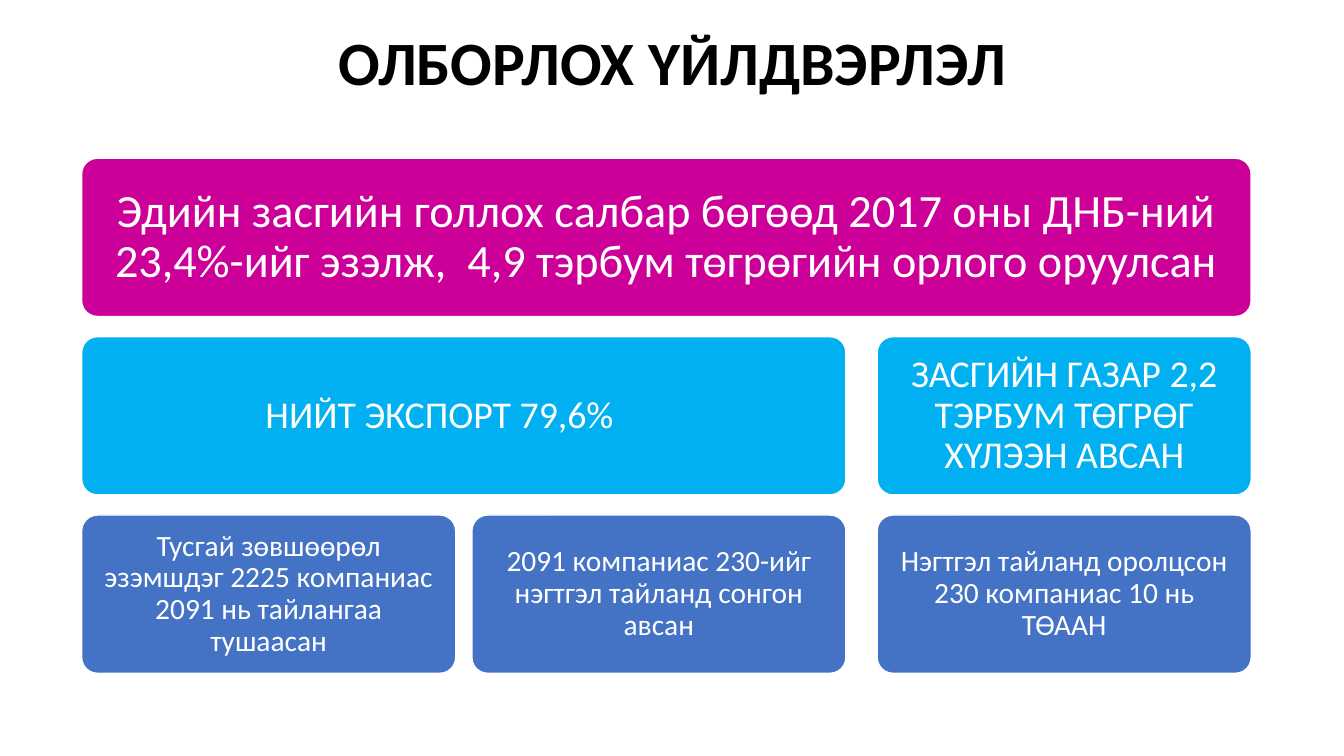
from dataclasses import dataclass

import pptx
import pptx.dml.color
import pptx.enum.shapes
import pptx.enum.text
import pptx.util

Inches = pptx.util.Inches


@dataclass(frozen=True)
class Theme:
    font: str = "Calibri"
    ink: str = "000000"
    light: str = "FFFFFF"
    headline_fill: str = "CC0099"
    share_fill: str = "00B0F0"
    report_fill: str = "4472C4"
    title_size: int = 44
    headline_size: int = 33
    share_size: int = 27
    report_size: int = 21


@dataclass(frozen=True)
class Level:
    row: int
    fill: str
    size: int
    inset: float


THEME = Theme()
HEADLINE = Level(0, THEME.headline_fill, THEME.headline_size, 0.14)
SHARE = Level(1, THEME.share_fill, THEME.share_size, 0.11)
REPORT = Level(2, THEME.report_fill, THEME.report_size, 0.09)

COLUMN_LEFTS = (0.81, 4.68, 8.7)
COLUMN_WIDTH = 3.71
TOP = 1.57
CARD_HEIGHT = 1.57
ROW_GAP = 0.2

CARDS = (
    (HEADLINE, 0, 2, 0,
     "Эдийн засгийн голлох салбар бөгөөд 2017 оны ДНБ-ний "
     "23,4%-ийг эзэлж,  4,9 тэрбум төгрөгийн орлого оруулсан"),
    (SHARE, 0, 1, 0.48, "НИЙТ ЭКСПОРТ 79,6%"),
    (SHARE, 2, 2, 0, "ЗАСГИЙН ГАЗАР 2,2 ТЭРБУМ ТӨГРӨГ ХҮЛЭЭН АВСАН"),
    (REPORT, 0, 0, 0,
     "Тусгай зөвшөөрөл эзэмшдэг 2225 компаниас 2091 нь тайлангаа тушаасан"),
    (REPORT, 1, 1, 0, "2091 компаниас 230-ийг нэгтгэл тайланд сонгон авсан"),
    (REPORT, 2, 2, 0, "Нэгтгэл тайланд оролцсон 230 компаниас 10 нь ТӨААН"),
)


def color(value):
    return pptx.dml.color.RGBColor.from_string(value)


def write_text(frame, text, size, ink, bold=False):
    frame.word_wrap = True
    frame.auto_size = pptx.enum.text.MSO_AUTO_SIZE.NONE
    frame.vertical_anchor = pptx.enum.text.MSO_ANCHOR.MIDDLE
    para = frame.paragraphs[0]
    para.text = text
    para.alignment = pptx.enum.text.PP_ALIGN.CENTER
    para.line_spacing = 0.9
    para.font.name = THEME.font
    para.font.size = pptx.util.Pt(size)
    para.font.bold = bold
    para.font.color.rgb = color(ink)


def add_title(page, text):
    title = page.shapes.title
    title.left, title.top = Inches(0.92), Inches(0.15)
    title.width, title.height = Inches(11.5), Inches(1)
    write_text(title.text_frame, text, THEME.title_size, THEME.ink, bold=True)


def add_card(page, level, first, last, extra_right, text):
    left = COLUMN_LEFTS[first]
    card = page.shapes.add_shape(
        pptx.enum.shapes.MSO_SHAPE.ROUNDED_RECTANGLE,
        Inches(left),
        Inches(TOP + level.row * (CARD_HEIGHT + ROW_GAP)),
        Inches(COLUMN_LEFTS[last] + COLUMN_WIDTH - left),
        Inches(CARD_HEIGHT),
    )
    card.adjustments[0] = 0.1
    card.shadow.inherit = False
    card.fill.solid()
    card.fill.fore_color.rgb = color(level.fill)
    card.line.color.rgb = color(THEME.light)
    card.line.width = pptx.util.Pt(1)
    frame = card.text_frame
    frame.margin_left = frame.margin_top = frame.margin_bottom = Inches(level.inset)
    frame.margin_right = Inches(level.inset + extra_right)
    write_text(frame, text, level.size, THEME.light)


def main():
    deck = pptx.Presentation()
    deck.slide_width, deck.slide_height = Inches(13.33), Inches(7.5)
    page = deck.slides.add_slide(deck.slide_layouts.get_by_name("Title Only"))
    add_title(page, "ОЛБОРЛОХ ҮЙЛДВЭРЛЭЛ")
    for card in CARDS:
        add_card(page, *card)
    deck.save("out.pptx")


if __name__ == "__main__":
    main()
